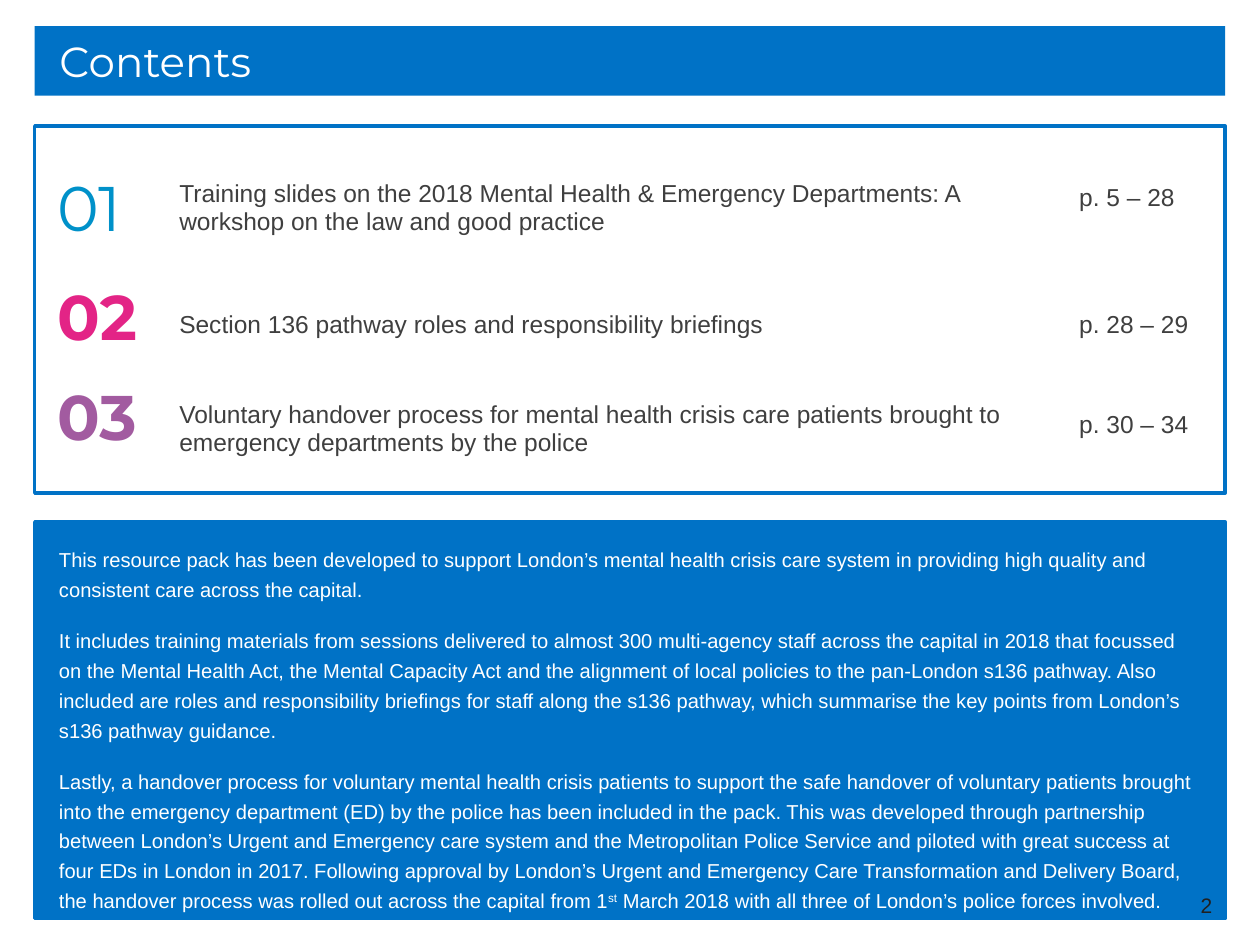
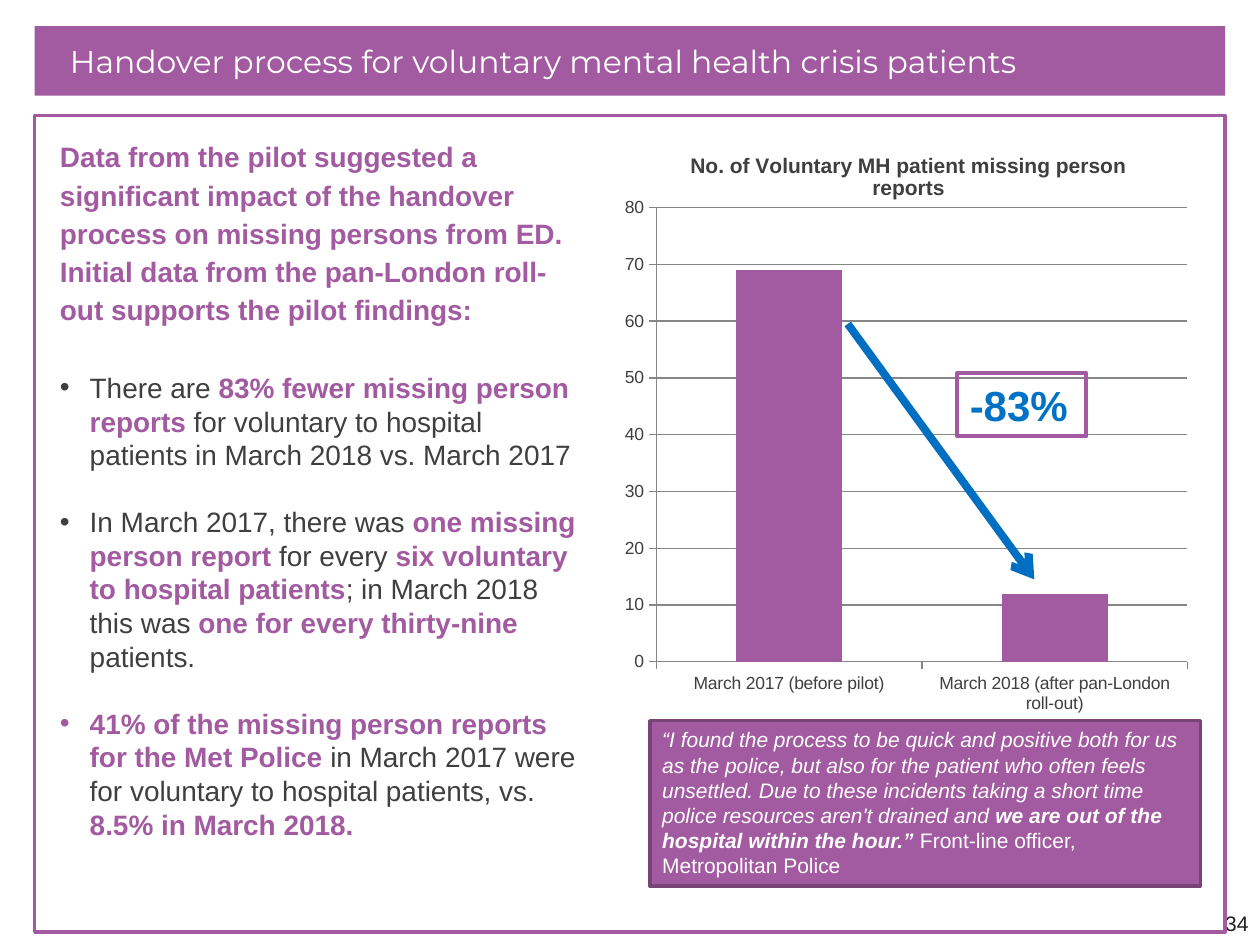
import pptx
import pptx.chart.data
import pptx.dml.color
import pptx.enum.chart
import pptx.enum.shapes
import pptx.enum.text
import pptx.oxml
import pptx.oxml.ns
import pptx.util

Cm, Pt = pptx.util.Cm, pptx.util.Pt
ALIGN = pptx.enum.text.PP_ALIGN
ANCHOR = pptx.enum.text.MSO_ANCHOR

BLUE, CYAN, PINK, PURPLE = "0072C6", "0091C9", "E32486", "A25BA0"
DARK_PURPLE, ARROW_BLUE = "784376", "006FC2"
WHITE, BLACK, GREY, GRID = "FFFFFF", "202020", "3F3F3F", "868686"
BODY_FONT, TITLE_FONT = "Arial", "Montserrat"
LEFT, WIDTH = 0.7, 24  # shared by title bands and frames, in cm


def rgb(value):
    return pptx.dml.color.RGBColor.from_string(value)


def style_font(font, size, color, name=BODY_FONT, bold=False, italic=False):
    font.size, font.name, font.bold, font.italic = Pt(size), name, bold, italic
    font.color.rgb = rgb(color)


def add_xml(parent, tag, **attrs):
    child = pptx.oxml.parse_xml(f"<{tag} {pptx.oxml.ns.nsdecls(tag.split(':')[0])}/>")
    for key, value in attrs.items():
        child.set(key, str(value))
    parent.append(child)
    return child


def set_layout(element, index, fractions, inner=False):
    """Place a chart part by x, y and optional w, h, as fractions of the chart."""
    for old in element.findall(pptx.oxml.ns.qn("c:layout")):
        element.remove(old)
    holder = add_xml(element, "c:layout")
    element.insert(index, holder)
    manual = add_xml(holder, "c:manualLayout")
    if inner:
        add_xml(manual, "c:layoutTarget", val="inner")
    for key in ("xMode", "yMode"):
        add_xml(manual, f"c:{key}", val="edge")
    for key, value in zip("xywh", fractions):
        add_xml(manual, f"c:{key}", val=value)


class Deck:
    """Presentation, its shared style and the slide being filled."""

    def __init__(self):
        self.prs = pptx.Presentation()
        self.prs.slide_width, self.prs.slide_height = Cm(25.4), Cm(19.05)
        self.s = None

    def new_slide(self):
        self.s = self.prs.slides.add_slide(self.prs.slide_layouts[6])

    def box(self, x, y, w, h, fill=None, line=None, weight=2):
        sp = self.s.shapes.add_shape(pptx.enum.shapes.MSO_SHAPE.RECTANGLE,
                                     Cm(x), Cm(y), Cm(w), Cm(h))
        sp.shadow.inherit = False
        if fill:
            sp.fill.solid()
            sp.fill.fore_color.rgb = rgb(fill)
        else:
            sp.fill.background()
        if line:
            sp.line.color.rgb = rgb(line)
            sp.line.width = Pt(weight)
        else:
            sp.line.fill.background()
        return sp

    def text_box(self, x, y, w, h):
        return self.s.shapes.add_textbox(Cm(x), Cm(y), Cm(w), Cm(h))

    def frame_text(self, sp, anchor=ANCHOR.TOP, inset=None):
        tf = sp.text_frame
        tf.word_wrap, tf.vertical_anchor = True, anchor
        if inset is not None:
            tf.margin_left = tf.margin_right = tf.margin_top = tf.margin_bottom = Cm(inset)
        return tf

    def paragraph(self, tf, runs, size, align=ALIGN.LEFT, spacing=1.0,
                  before=0, after=0, indent=0, bullet=False, name=BODY_FONT):
        """Add runs given as (text, colour, bold, italic, superscript)."""
        p = tf.paragraphs[0]
        if p.runs:
            p = tf.add_paragraph()
        p.alignment, p.line_spacing = align, spacing
        p.space_before, p.space_after = Pt(before), Pt(after)
        pPr = p._p.get_or_add_pPr()
        pPr.set("marL", str(Cm(indent)))
        pPr.set("indent", str(-Cm(indent) if bullet else 0))
        if bullet:
            add_xml(pPr, "a:buFont", typeface=BODY_FONT)
            add_xml(pPr, "a:buChar", char="•")
        for text, color, *flags in runs:
            bold, italic, superscript = (flags + [False] * 3)[:3]
            r = p.add_run()
            r.text = text
            style_font(r.font, size, color, name, bold, italic)
            if superscript:
                r._r.get_or_add_rPr().set("baseline", "30000")

    def title(self, text, color, size, indent):
        sp = self.box(LEFT, 0.53, WIDTH, 1.4, fill=color)
        tf = self.frame_text(sp, ANCHOR.MIDDLE)
        self.paragraph(tf, [(text, WHITE)], size, indent=indent, name=TITLE_FONT)

    def page_number(self, number, x, y):
        tf = self.frame_text(self.text_box(x, y, 5.92, 1.02), ANCHOR.MIDDLE)
        self.paragraph(tf, [(number, BLACK)], 12, ALIGN.RIGHT)

    def contents_table(self, rows, x, y, widths, row_height):
        """Rows hold (text, size, colour, font, bold, anchor, bottom margin) cells."""
        table = self.s.shapes.add_table(len(rows), len(widths), Cm(x), Cm(y),
                                        Cm(sum(widths)), Cm(row_height * len(rows))).table
        table.first_row = table.horz_banding = False
        for column, width in zip(table.columns, widths):
            column.width = Cm(width)
        for i, row in enumerate(rows):
            for j, (text, size, color, name, bold, anchor, bottom) in enumerate(row):
                cell = table.cell(i, j)
                cell.fill.background()
                cell.vertical_anchor, cell.margin_bottom = anchor, Cm(bottom)
                self.paragraph(cell.text_frame, [(text, color, bold)], size, name=name)

    def column_chart(self, x, y, w, h, title, categories, values, color,
                     title_layout, plot_layout):
        data = pptx.chart.data.CategoryChartData()
        data.categories = categories
        data.add_series("Series 1", values)
        chart = self.s.shapes.add_chart(pptx.enum.chart.XL_CHART_TYPE.COLUMN_CLUSTERED,
                                        Cm(x), Cm(y), Cm(w), Cm(h), data).chart
        chart.has_legend = False
        style_font(chart.font, 10, GREY)
        r = chart.chart_title.text_frame.paragraphs[0].add_run()
        r.text = title
        style_font(r.font, 12, GREY, bold=True)

        plot = chart.plots[0]
        plot.gap_width, plot.vary_by_categories = 150, False
        fill = plot.series[0].format.fill
        fill.solid()
        fill.fore_color.rgb = rgb(color)
        axis = chart.value_axis
        axis.minimum_scale, axis.maximum_scale, axis.major_unit = 0, 80, 10
        axis.has_major_gridlines = True
        for line in (axis.format.line, axis.major_gridlines.format.line,
                     chart.category_axis.format.line):
            line.color.rgb = rgb(GRID)
            line.width = Pt(0.75)
        for each in (axis, chart.category_axis):
            each.major_tick_mark = pptx.enum.chart.XL_TICK_MARK.OUTSIDE
        set_layout(chart._chartSpace.chart.find(pptx.oxml.ns.qn("c:title")), 1, title_layout)
        set_layout(chart._chartSpace.chart.plotArea, 0, plot_layout, inner=True)

    def arrow(self, x1, y1, x2, y2, color, weight):
        sp = self.s.shapes.add_connector(pptx.enum.shapes.MSO_CONNECTOR.STRAIGHT,
                                         Cm(x1), Cm(y1), Cm(x2), Cm(y2))
        sp.line.color.rgb = rgb(color)
        sp.line.width = Pt(weight)
        add_xml(sp.line._get_or_add_ln(), "a:tailEnd", type="arrow")
        add_xml(sp._element.spPr, "a:effectLst")


def contents_slide(deck):
    deck.new_slide()
    deck.box(LEFT, 10.52, WIDTH, 8, BLUE, BLUE)
    deck.title("Contents", BLUE, 24, 0.25)

    tf = deck.frame_text(deck.text_box(0.71, 10.92, 23.39, 6.4), inset=0)
    introduction = [
        [("This resource pack has been developed to support London’s mental health crisis care "
          "system in providing high quality and consistent care across the capital.", WHITE)],
        [("It includes training materials from sessions delivered to almost 300 multi-agency "
          "staff across the capital in 2018 that focussed on the Mental Health Act, the Mental "
          "Capacity Act and the alignment of local policies to the pan-London s136 pathway. "
          "Also included are roles and responsibility briefings for staff along the s136 "
          "pathway, which summarise the key points from London’s s136 pathway guidance.",
          WHITE)],
        [("Lastly, a handover process for voluntary mental health crisis patients to support "
          "the safe handover of voluntary patients brought into the emergency department (ED) "
          "by the police has been included in the pack. This was developed through partnership "
          "between London’s Urgent and Emergency care system and the Metropolitan Police "
          "Service and piloted with great success at four EDs in London in 2017. Following "
          "approval by London’s Urgent and Emergency Care Transformation and Delivery Board, "
          "the handover process was rolled out across the capital from 1", WHITE),
         ("st", WHITE, False, False, True),
         (" March 2018 with all three of London’s police forces involved.", WHITE)],
    ]
    for runs in introduction:
        deck.paragraph(tf, runs, 11.5, spacing=1.24, before=6, after=6, indent=0.48)
    deck.page_number("2", 18.77, 17.73)

    sections = [
        ("01", CYAN, False, ANCHOR.BOTTOM, 0.38, 0.86, "p. 5 – 28",
         "Training slides on the 2018 Mental Health & Emergency Departments: "
         "A workshop on the law and good practice"),
        ("02", PINK, True, ANCHOR.BOTTOM, 0.51, 0.51, "p. 28 – 29",
         "Section 136 pathway roles and responsibility briefings"),
        ("03", PURPLE, True, ANCHOR.MIDDLE, 0.35, 0.71, "p. 30 – 34",
         "Voluntary handover process for mental health crisis care patients "
         "brought to emergency departments by the police"),
    ]
    rows = [[(number, 36, color, TITLE_FONT, bold, anchor, 0.15),
             (topic, 14, GREY, BODY_FONT, False, ANCHOR.BOTTOM, topic_gap),
             (pages, 14, GREY, BODY_FONT, False, ANCHOR.BOTTOM, pages_gap)]
            for number, color, bold, anchor, topic_gap, pages_gap, pages, topic in sections]
    deck.contents_table(rows, 0.9, 2.92, (2.46, 18.14, 3), 2.21)
    deck.box(LEFT, 2.54, WIDTH, 7.4, line=BLUE)


def handover_slide(deck):
    deck.new_slide()
    deck.page_number("34", 19.5, 18.1)
    deck.title("Handover process for voluntary mental health crisis patients", PURPLE, 18, 0.46)
    deck.box(LEFT, 2.33, WIDTH, 16.46, line=PURPLE)

    tf = deck.frame_text(deck.text_box(0.96, 2.6, 11, 14.63))
    deck.paragraph(tf, [(
        "Data from the pilot suggested a significant impact of the handover process on missing "
        "persons from ED. Initial data from the pan-London roll-out supports the pilot "
        "findings:", PURPLE, True)], 16, spacing=1.14, before=6, after=6)
    plain, strong = (GREY, False), (PURPLE, True)
    findings = [
        [("There are ", *plain), ("83% fewer missing person reports ", *strong),
         ("for voluntary to hospital patients in March 2018 vs. March 2017", *plain)],
        [("In March 2017, there was ", *plain), ("one missing person report ", *strong),
         ("for every ", *plain), ("six voluntary to hospital patients", *strong),
         ("; in March 2018 this was ", *plain), ("one for every thirty-nine ", *strong),
         ("patients.", *plain)],
        [("41% of the missing person reports for the Met Police ", *strong),
         ("in March 2017 were for voluntary to hospital patients, vs. ", *plain),
         ("8.5% in March 2018.", *strong)],
    ]
    for runs in findings:
        deck.paragraph(tf, runs, 16, before=19.2, indent=0.6, bullet=True)

    deck.column_chart(12.5, 2.64, 12.17, 11.89,
                      "No. of Voluntary MH patient missing person reports",
                      ["March 2017 (before pilot)", "March 2018 (after pan-London roll-out)"],
                      [69, 12], PURPLE, (0.11, 0.03), (0.06, 0.13, 0.88, 0.77))
    deck.arrow(17.09, 6.53, 20.85, 11.68, ARROW_BLUE, 4.5)

    tf = deck.frame_text(deck.box(19.3, 7.52, 2.6, 1.28, line=PURPLE, weight=2.25))
    deck.paragraph(tf, [("-83%", BLUE, True)], 24)

    tf = deck.frame_text(deck.box(13.1, 14.53, 11.1, 3.33, PURPLE, DARK_PURPLE))
    deck.paragraph(tf, [
        ("“I found the process to be quick and positive both for us as the police, but also for "
         "the patient who often feels unsettled. Due to these incidents taking a short time "
         "police resources aren't drained and ", WHITE, False, True),
        ("we are out of the hospital within the hour.” ", WHITE, True, True),
        ("Front-line officer, Metropolitan Police", WHITE)], 12)


def main():
    deck = Deck()
    contents_slide(deck)
    handover_slide(deck)
    deck.prs.save("out.pptx")


if __name__ == "__main__":
    main()
